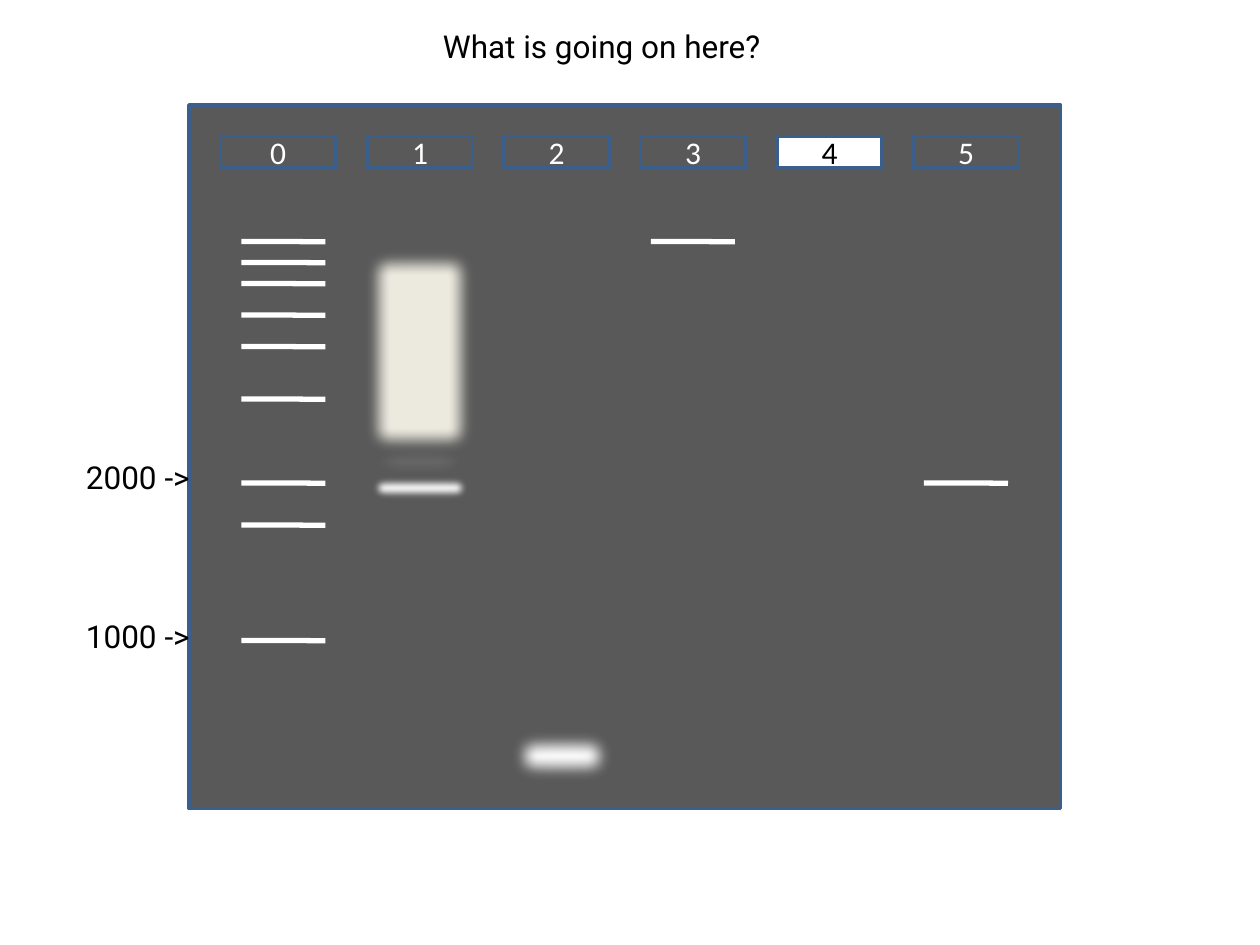
from lxml import etree
from pptx import Presentation
from pptx.dml.color import RGBColor
from pptx.enum.shapes import MSO_CONNECTOR, MSO_SHAPE
from pptx.enum.text import MSO_ANCHOR, MSO_AUTO_SIZE, PP_ALIGN
from pptx.oxml.ns import qn
from pptx.util import Inches, Pt

RECT = MSO_SHAPE.RECTANGLE
STRAIGHT = MSO_CONNECTOR.STRAIGHT
MIDDLE = MSO_ANCHOR.MIDDLE
FIT = MSO_AUTO_SIZE.SHAPE_TO_FIT_TEXT
LEFT, CENTER = PP_ALIGN.LEFT, PP_ALIGN.CENTER

THEME = {
    "gel": "595959", "edge": "3A5F8C", "band": "FFFFFF", "smear": "EEECE1",
    "light": "FFFFFF", "dark": "000000",
    "body": "Roboto", "lane": "Calibri", "size": 18, "edge_w": 2, "band_w": 3,
}

prs = Presentation()
prs.slide_width, prs.slide_height = Inches(10), Inches(7.5)
s = prs.slides.add_slide(prs.slide_layouts[6])
COL, ROW = prs.slide_width / 120, prs.slide_height / 90


def add_text(tf, text, font="body", color="dark", align=LEFT):
    p = tf.paragraphs[0]
    p.alignment = align
    r = p.add_run()
    r.text = text
    r.font.name = THEME[font]
    r.font.size = Pt(THEME["size"])
    r.font.color.rgb = RGBColor.from_string(THEME[color])


def add_box(x, y, w, h, fill, edge=True, soft=0):
    sp = s.shapes.add_shape(RECT, int(x * COL), int(y * ROW), int(w * COL), int(h * ROW))
    sp.shadow.inherit = False
    sp.fill.solid()
    sp.fill.fore_color.rgb = RGBColor.from_string(THEME[fill])
    if edge:
        sp.line.color.rgb = RGBColor.from_string(THEME["edge"])
        sp.line.width = Pt(THEME["edge_w"])
    else:
        sp.line.fill.background()
    if soft:
        effects = sp._element.spPr.find(qn("a:effectLst"))
        etree.SubElement(effects, qn("a:softEdge")).set("rad", str(Pt(soft)))
    return sp


add_box(18, 10, 83, 67, "gel")

lanes = [(21, 11)] + [(35 + 13 * i, 10) for i in range(5)]
for n, (x, w) in enumerate(lanes):
    chosen = n == 4
    sp = add_box(x, 13, w, 3, "band" if chosen else "gel")
    tf = sp.text_frame
    tf.vertical_anchor = MIDDLE
    add_text(tf, str(n), font="lane", color="dark" if chosen else "light", align=CENTER)

bands = [(23, y) for y in (23, 25, 27, 30, 33, 38, 46, 50, 61)] + [(62, 23), (88, 46)]
for x, y in bands:
    line = s.shapes.add_connector(
        STRAIGHT, int(x * COL), int(y * ROW), int((x + 8) * COL), int((y + 0.02) * ROW))
    line.line.color.rgb = RGBColor.from_string(THEME["band"])
    line.line.width = Pt(THEME["band_w"])
    etree.SubElement(line._element.spPr, qn("a:effectLst"))

add_box(34, 23, 12, 21, "smear", edge=False, soft=10)
add_box(48, 69, 11, 6, "band", soft=10)
add_box(34, 42, 12, 4, "band", edge=False, soft=10)
add_box(35, 45, 10, 3, "band", edge=False, soft=5)

labels = [
    ("What is going on here?", 41, 2, 43, True),
    ("2000 ->", 7, 43, 13.3, False),
    ("1000 ->", 7, 58.2, 13.3, False),
]
for text, x, y, w, wrap in labels:
    tb = s.shapes.add_textbox(int(x * COL), int(y * ROW), int(w * COL), int(4.8 * ROW))
    tf = tb.text_frame
    tf.word_wrap = wrap
    tf.auto_size = FIT
    add_text(tf, text)

prs.save("out.pptx")
